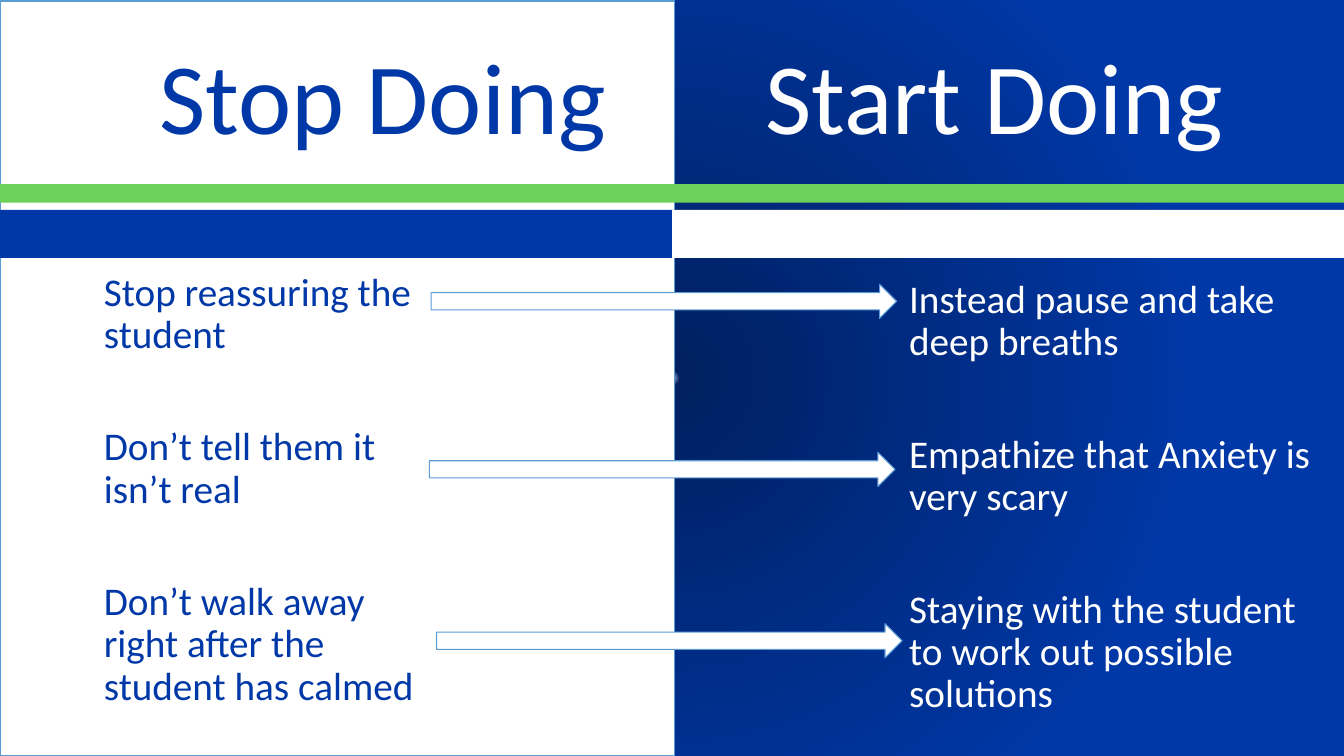
from pptx import Presentation
from pptx import util as u
from pptx.dml.color import RGBColor
from pptx.enum import shapes, text
from pptx.oxml import parse_xml
from pptx.oxml.ns import nsdecls
from lxml import etree

COLORS = {"blue": "0038A8", "navy": "002060", "pale": "B3C6E7",
          "green": "6BD158", "white": "FFFFFF", "outline": "5B9BD5"}
FONT = "Calibri"
WIDTH, HEIGHT = 960, 540

HEADINGS = [("Stop Doing", -34.6, "blue"), ("Start Doing", 402.5, "white")]
HEADING_TOP, HEADING_WIDTH, HEADING_HEIGHT = 20.2, 615.6, 94.3
LISTS = [
    ((67, 190.8, 244.8, 333.4), "blue",
     ["Stop reassuring the student",
      "Don’t tell them it isn’t real",
      "Don’t walk away right after the student has calmed"]),
    ((642.2, 196.2, 302.4, 333.4), "white",
     ["Instead pause and take deep breaths",
      "Empathize that Anxiety is very scary",
      "Staying with the student to work out possible solutions"]),
]
PANELS = [
    ((0, 0.7, 481.7, 539.3), "white", "outline"),
    ((0, 131.5, WIDTH, 13.2), "green", None),
    ((0, 150, 481.7, 34.3), "blue", None),
    ((480.2, 150, 479.8, 34.3), "white", None),
]
ARROWS = [(307.9, 203), (306.7, 323), (311.8, 445.5)]
ARROW_SIZE = (332.6, 24.5)
GRADIENT = [(0, "pale"), (1, "navy"), (70, "blue"), (100, "blue")]


def rgb(name):
    return RGBColor.from_string(COLORS[name])


def place(shape, box):
    shape.left, shape.top, shape.width, shape.height = map(u.Pt, box)


def add_block(slide, kind, box, fill, outline):
    shape = slide.shapes.add_shape(kind, *map(u.Pt, box))
    shape.shadow.inherit = False
    shape.fill.solid()
    shape.fill.fore_color.rgb = rgb(fill)
    if outline:
        shape.line.color.rgb = rgb(outline)
        shape.line.width = u.Pt(0.75)
    else:
        shape.line.fill.background()


def set_background(slide):
    stops = "".join(f'<a:gs pos="{position * 1000}"><a:srgbClr val="{COLORS[name]}"/></a:gs>'
                    for position, name in GRADIENT)
    slide.element.cSld.insert(0, parse_xml(
        f'<p:bg {nsdecls("p", "a")}><p:bgPr><a:gradFill rotWithShape="1">'
        f'<a:gsLst>{stops}</a:gsLst><a:path path="circle">'
        '<a:fillToRect l="50000" t="50000" r="50000" b="50000"/></a:path>'
        '</a:gradFill><a:effectLst/></p:bgPr></p:bg>'))


def style(paragraph, size, color):
    paragraph.font.name = FONT
    paragraph.font.size = u.Pt(size)
    paragraph.font.bold = False
    paragraph.font.color.rgb = rgb(color)


def fill_heading(shape, wording, left, color):
    place(shape, (left, HEADING_TOP, HEADING_WIDTH, HEADING_HEIGHT))
    frame = shape.text_frame
    frame.text = wording
    frame.word_wrap = True
    frame.auto_size = text.MSO_AUTO_SIZE.NONE
    frame.vertical_anchor = text.MSO_ANCHOR.MIDDLE
    frame.paragraphs[0].alignment = text.PP_ALIGN.CENTER
    style(frame.paragraphs[0], 72, color)


def fill_list(shape, box, color, items):
    place(shape, box)
    frame = shape.text_frame
    frame.text = "\n".join(items)
    frame.word_wrap = True
    frame.auto_size = text.MSO_AUTO_SIZE.NONE
    for index, paragraph in enumerate(frame.paragraphs):
        paragraph.line_spacing = 0.9
        paragraph.space_before = u.Pt(50 if index else 0)
        properties = paragraph._p.get_or_add_pPr()
        properties.set("marL", "0")
        properties.set("indent", "0")
        etree.SubElement(properties, "{http://schemas.openxmlformats.org/drawingml/2006/main}buNone")
        style(paragraph, 28, color)


def main():
    presentation = Presentation()
    presentation.slide_width, presentation.slide_height = u.Pt(WIDTH), u.Pt(HEIGHT)
    slide = presentation.slides.add_slide(presentation.slide_layouts.get_by_name("Two Content"))
    set_background(slide)
    title, *bodies = slide.placeholders

    for box, fill, outline in PANELS:
        add_block(slide, shapes.MSO_SHAPE.RECTANGLE, box, fill, outline)
    for position in ARROWS:
        add_block(slide, shapes.MSO_SHAPE.RIGHT_ARROW, position + ARROW_SIZE, "white", "outline")

    start_heading = slide.shapes.add_textbox(0, 0, 0, 0)
    for shape, heading in zip((title, start_heading), HEADINGS):
        fill_heading(shape, *heading)
    for body, content in zip(bodies, LISTS):
        fill_list(body, *content)
    for placeholder in (title, *bodies):
        slide.shapes.element.append(placeholder.element)

    presentation.save("out.pptx")


if __name__ == "__main__":
    main()
